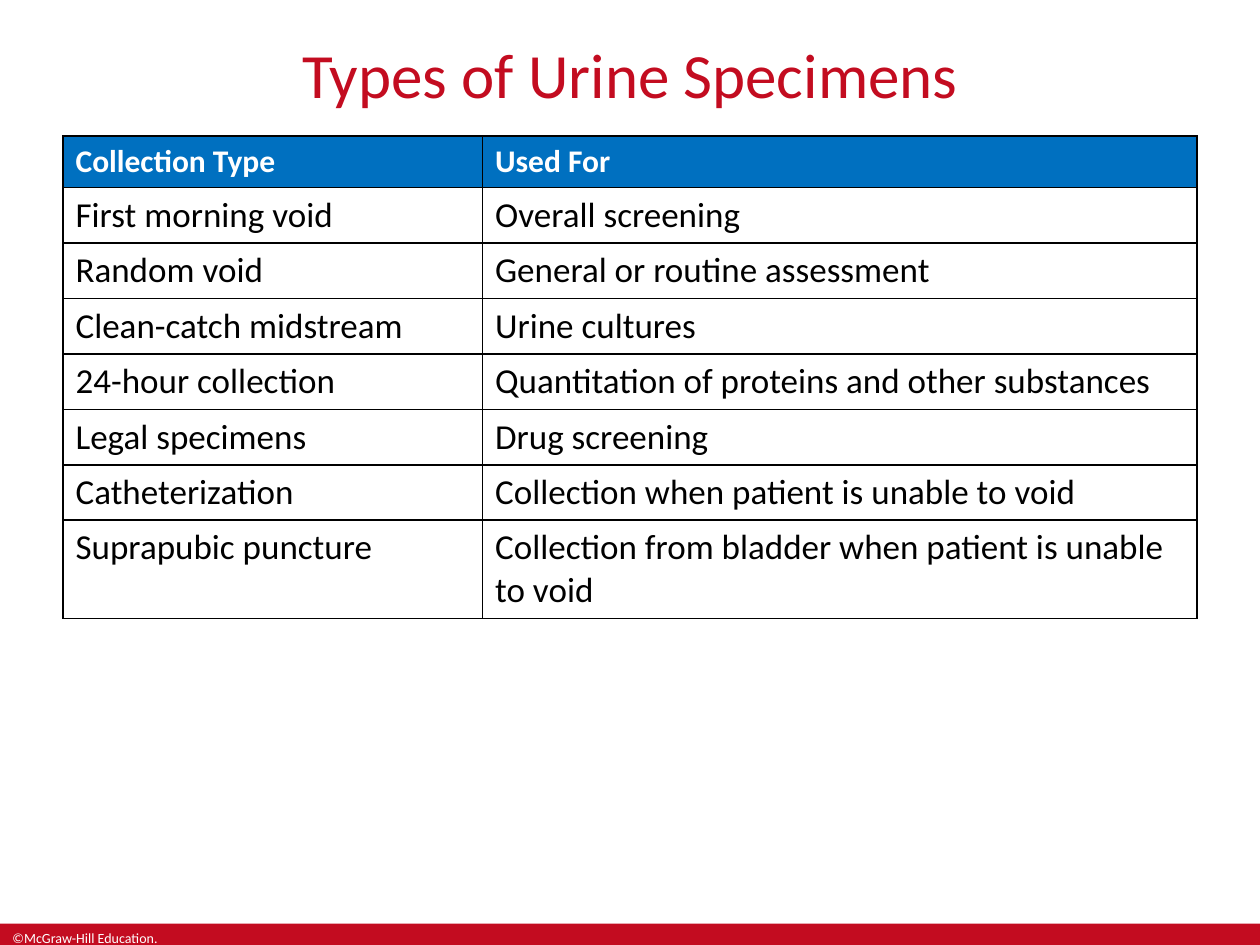
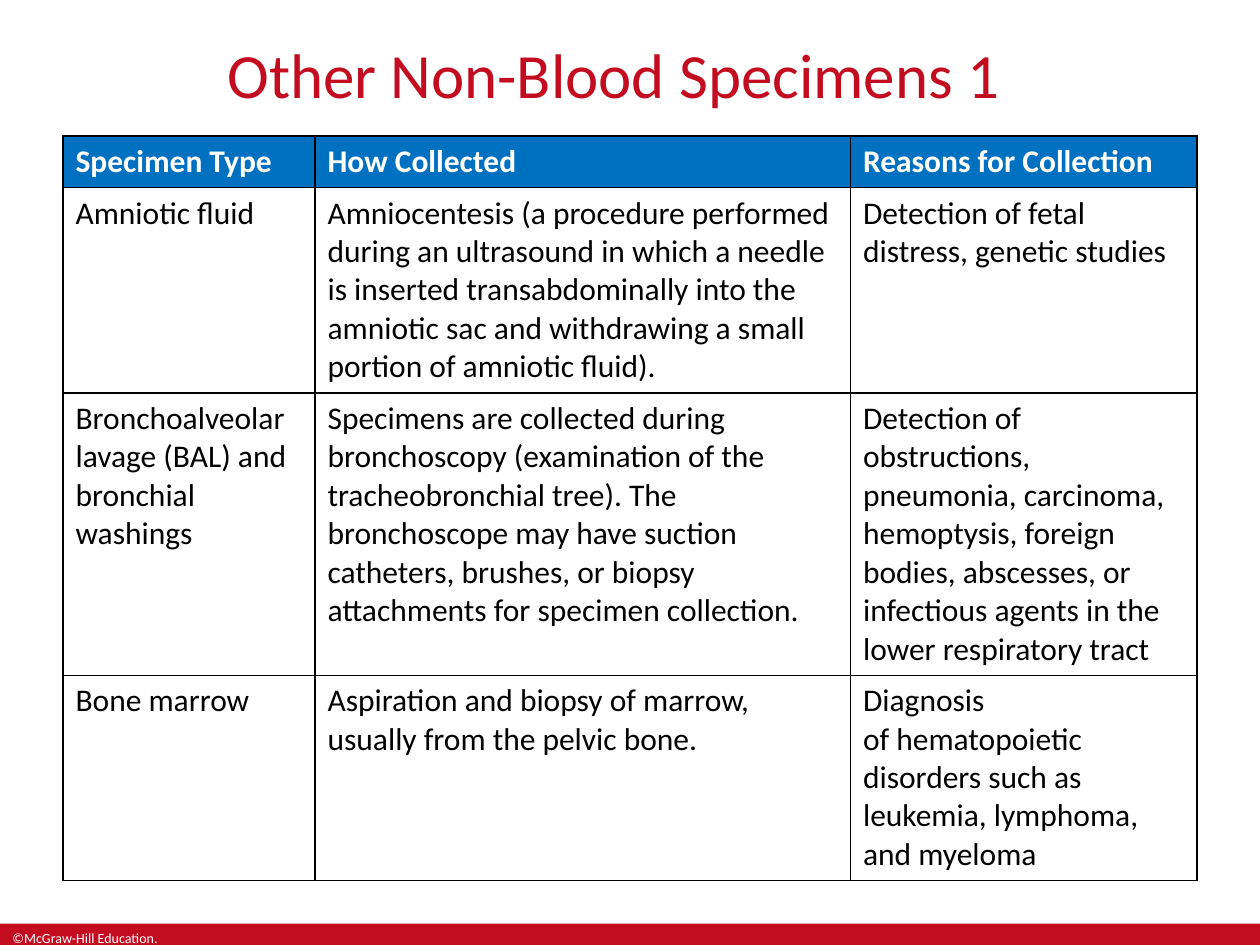
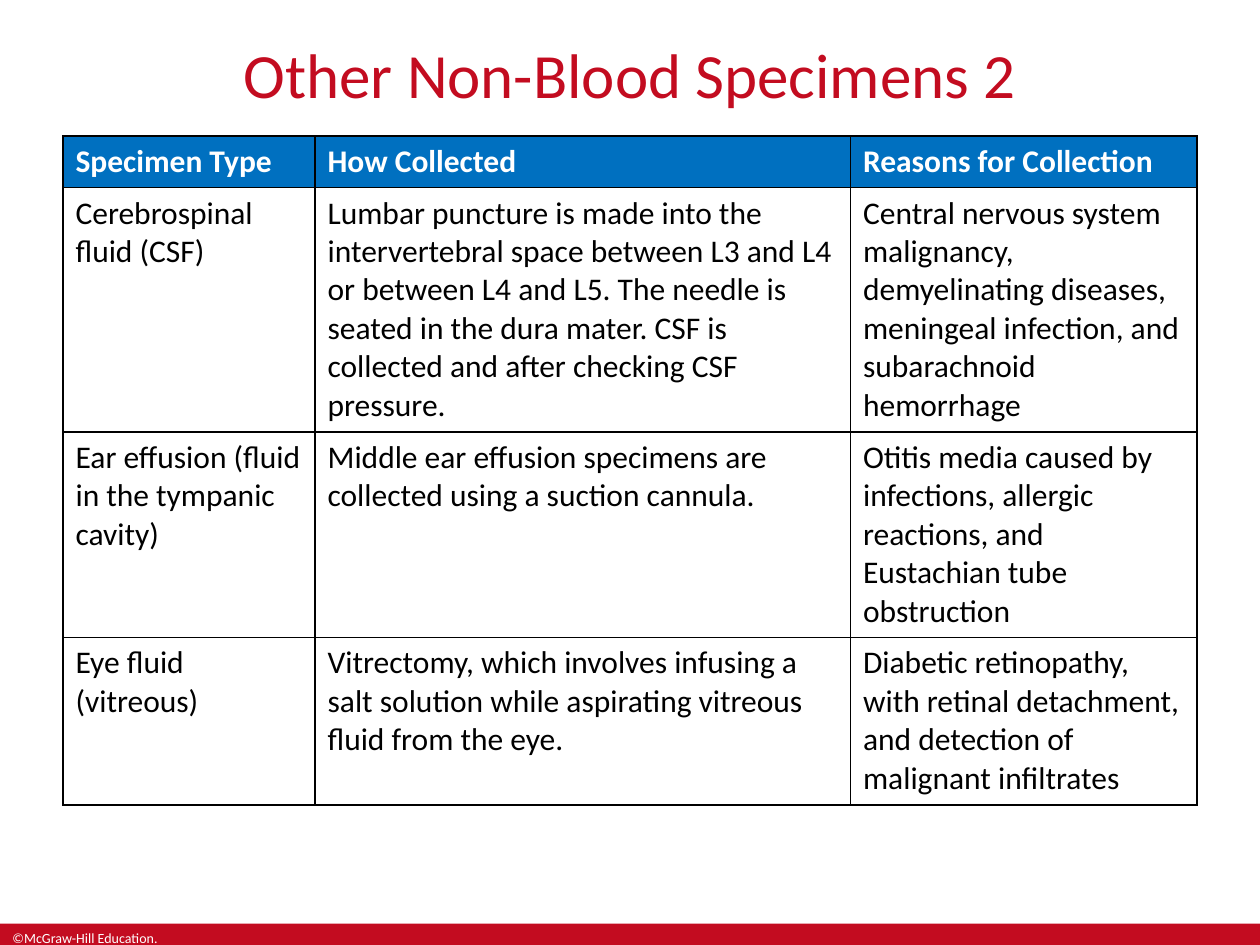
"""Build three slides of specimen tables with a shared title style and footer band."""
import pptx
import pptx.dml.color
import pptx.enum.shapes
import pptx.enum.text
import pptx.oxml
import pptx.oxml.ns
import pptx.util

Inches = pptx.util.Inches
Pt = pptx.util.Pt
RED = pptx.dml.color.RGBColor(0xC3, 0x0C, 0x20)
BLUE = pptx.dml.color.RGBColor(0x00, 0x70, 0xC0)
WHITE = pptx.dml.color.RGBColor(0xFF, 0xFF, 0xFF)
BLACK = pptx.dml.color.RGBColor(0x00, 0x00, 0x00)
NBSP = chr(160)

OTHER_COLS = [2, 4.25, 2.75]
OTHER_HEAD = ["Specimen Type", "How Collected", "Reasons for Collection"]
SLIDES = [
    {
        "title": "Types of Urine Specimens", "title_width": 10,
        "cols": [3.33, 5.67], "body_size": 20,
        "heights": [0.41] + [0.44] * 6 + [0.78],
        "rows": [
            ["Collection Type", "Used For"],
            ["First morning void", "Overall screening"],
            ["Random void", "General or routine assessment"],
            ["Clean-catch midstream", "Urine cultures"],
            ["24-hour collection", "Quantitation of proteins and other substances"],
            ["Legal specimens", "Drug screening"],
            ["Catheterization", "Collection when patient is unable to void"],
            ["Suprapubic puncture", "Collection from bladder when patient is unable to void"],
        ],
    },
    {
        "title": "Other Non-Blood Specimens 1", "title_width": 9.74,
        "cols": OTHER_COLS, "body_size": 18,
        "heights": [0.41, 1.63, 2.24, 1.63],
        "rows": [
            OTHER_HEAD,
            ["Amniotic fluid",
             "Amniocentesis (a procedure performed during an ultrasound in which a needle is "
             "inserted transabdominally into the amniotic sac and withdrawing a small portion "
             "of amniotic fluid).",
             "Detection of fetal distress, genetic studies"],
            ["Bronchoalveolar lavage (BAL) and bronchial washings",
             "Specimens are collected during bronchoscopy (examination of the tracheobronchial "
             "tree). The bronchoscope may have suction catheters, brushes, or biopsy "
             "attachments for specimen collection.",
             "Detection of obstructions, pneumonia, carcinoma, hemoptysis, foreign bodies, "
             "abscesses, or infectious agents in the lower respiratory tract"],
            ["Bone marrow",
             "Aspiration and biopsy of marrow, usually from the pelvic bone.",
             f"Diagnosis of{NBSP}hematopoietic disorders such as leukemia, lymphoma, "
             "and myeloma"],
        ],
    },
    {
        "title": "Other Non-Blood Specimens 2", "title_width": 10,
        "cols": OTHER_COLS, "body_size": 18,
        "heights": [0.41, 1.94, 1.63, 1.33],
        "rows": [
            OTHER_HEAD,
            ["Cerebrospinal fluid (CSF)",
             "Lumbar puncture is made into the intervertebral space between L3 and L4 or "
             "between L4 and L5. The needle is seated in the dura mater. CSF is collected and "
             "after checking CSF pressure.",
             "Central nervous system malignancy, demyelinating diseases, meningeal infection, "
             "and subarachnoid hemorrhage"],
            ["Ear effusion (fluid in the tympanic cavity)",
             "Middle ear effusion specimens are collected using a suction cannula.",
             "Otitis media caused by infections, allergic reactions, and Eustachian tube "
             "obstruction"],
            ["Eye fluid (vitreous)",
             "Vitrectomy, which involves infusing a salt solution while aspirating vitreous "
             "fluid from the eye.",
             "Diabetic retinopathy, with retinal detachment, and detection of malignant "
             "infiltrates"],
        ],
    },
]


def write(tf, text, size, color, bold=False):
    """Put one formatted paragraph in a text frame and return it."""
    p = tf.paragraphs[0]
    r = p.add_run()
    r.text = text
    for name, value in {"name": "Calibri", "size": Pt(size), "bold": bold}.items():
        setattr(r.font, name, value)
    r.font.color.rgb = color
    return p


def add_borders(cell):
    """Draw a 1 pt black line on each side of a table cell."""
    tcPr = cell._tc.get_or_add_tcPr()
    for side in "LRTB":
        tcPr.append(pptx.oxml.parse_xml(
            f'<a:ln{side} {pptx.oxml.ns.nsdecls("a")} w="{Pt(1)}">'
            f'<a:solidFill><a:srgbClr val="{BLACK}"/></a:solidFill></a:ln{side}>'))


prs = pptx.Presentation()
prs.slide_width, prs.slide_height = Inches(10), Inches(7.5)

for page in SLIDES:
    s = prs.slides.add_slide(prs.slide_layouts[5])

    band = s.shapes.add_shape(pptx.enum.shapes.MSO_SHAPE.RECTANGLE,
                              Inches(0), Inches(7.33), Inches(10), Inches(0.17))
    band.shadow.inherit = False
    band.fill.solid()
    band.fill.fore_color.rgb = RED
    band.line.fill.background()

    footer = s.shapes.add_textbox(Inches(0), Inches(7.33), Inches(1.5), Inches(0.17))
    tf = footer.text_frame
    for name, value in {"word_wrap": True, "margin_top": Inches(0.05), "margin_bottom": 0}.items():
        setattr(tf, name, value)
    write(tf, "©McGraw-Hill Education.", 8, WHITE)

    title = s.shapes.title
    for name, value in {"left": 0, "top": 0.25, "width": page["title_width"],
                        "height": 0.67}.items():
        setattr(title, name, Inches(value))
    tf = title.text_frame
    for name, value in {"word_wrap": True, "auto_size": pptx.enum.text.MSO_AUTO_SIZE.NONE,
                        "vertical_anchor": pptx.enum.text.MSO_ANCHOR.MIDDLE,
                        "margin_top": Inches(0.03), "margin_bottom": Inches(0.03)}.items():
        setattr(tf, name, value)
    p = write(tf, page["title"], 36, RED)
    p.alignment = pptx.enum.text.PP_ALIGN.CENTER

    rows, cols, heights = page["rows"], page["cols"], page["heights"]
    table = s.shapes.add_table(len(rows), len(cols), Inches(0.5), Inches(1.08),
                               Inches(9), Inches(sum(heights))).table
    table.horz_banding = False
    for column, width in zip(table.columns, cols):
        column.width = Inches(width)
    for i, row in enumerate(rows):
        table.rows[i].height = Inches(heights[i])
        for j, text in enumerate(row):
            cell = table.cell(i, j)
            add_borders(cell)
            if i == 0:
                cell.fill.solid()
                cell.fill.fore_color.rgb = BLUE
                write(cell.text_frame, text, 18, WHITE, bold=True)
            else:
                cell.fill.background()
                write(cell.text_frame, text, page["body_size"], BLACK)

prs.save("out.pptx")
